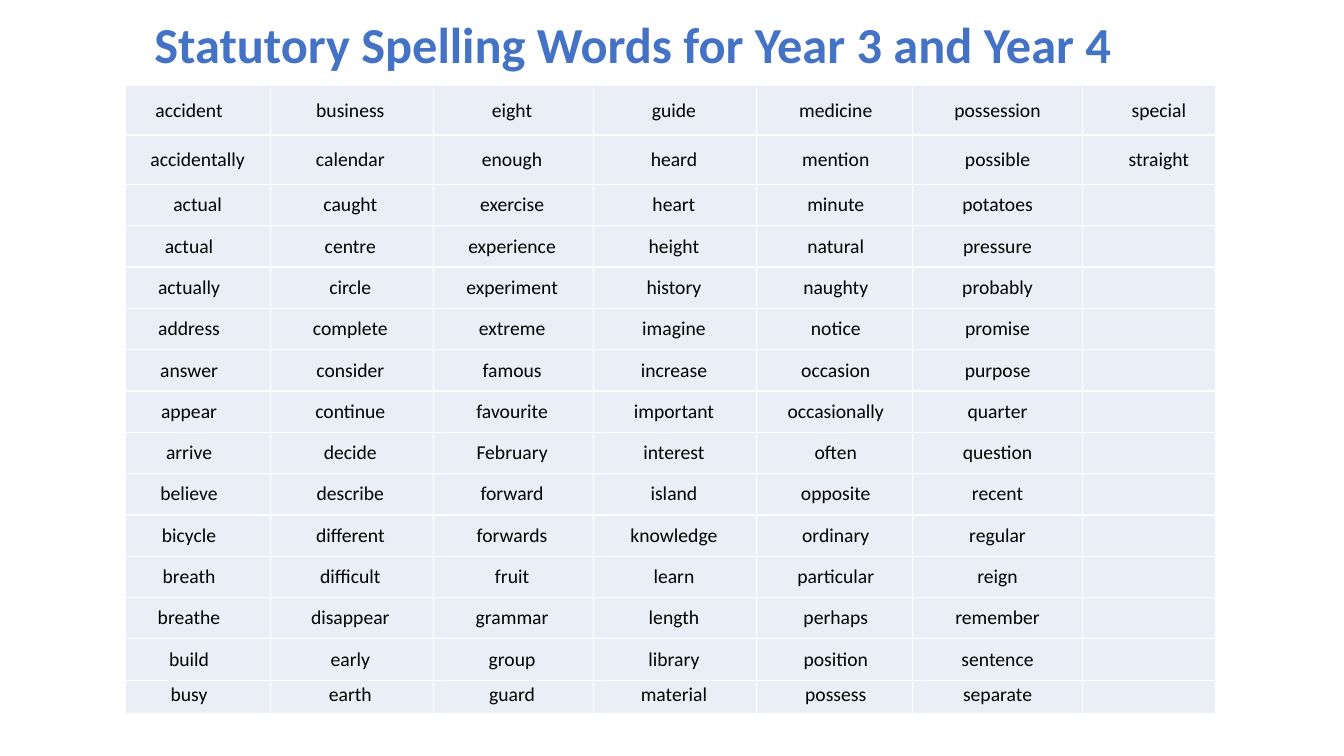
from dataclasses import dataclass

from lxml import etree
from pptx import Presentation
from pptx import util as u
from pptx.dml.color import RGBColor
from pptx.enum import text
from pptx.oxml import ns


@dataclass(frozen=True)
class Theme:
    font: str = "Calibri"
    title_color: str = "4472C4"
    word_color: str = "000000"
    cell_fill: str = "EAEFF7"
    border: str = "FFFFFF"
    title_size: int = 36
    word_size: int = 14
    last_row_spacing: float = 14.6


THEME = Theme()
TITLE = "Statutory Spelling Words for Year 3 and Year 4"

# Words run down each column
WORD_COLUMNS = [
    "accident accidentally actual actual actually address answer appear arrive "
    "believe bicycle breath breathe build busy",
    "business calendar caught centre circle complete consider continue decide "
    "describe different difficult disappear early earth",
    "eight enough exercise experience experiment extreme famous favourite February "
    "forward forwards fruit grammar group guard",
    "guide heard heart height history imagine increase important interest "
    "island knowledge learn length library material",
    "medicine mention minute natural naughty notice occasion occasionally often "
    "opposite ordinary particular perhaps position possess",
    "possession possible potatoes pressure probably promise purpose quarter question "
    "recent regular reign remember sentence separate",
    "special straight",
]
COLUMN_WIDTHS = [1.44, 1.62, 1.59, 1.61, 1.55, 1.69, 1.32]
ROW_HEIGHTS = [0.49] * 2 + [0.41] * 12 + [0.33]

# Left and right paragraph indents of each column
INDENTS = [(0.02, 0.19), (0.19, 0.22), (0.21, 0.24), (0.24, 0.26),
           (0.24, 0.21), (0.21, 0.21), (0.21, 0.02)]
UNINDENTED = {(1, 0), (2, 0)}


def write_text(frame, content, *, size, color, bold=False, indents=(0, 0), spacing=1.0):
    para = frame.paragraphs[0]
    para.alignment = text.PP_ALIGN.CENTER
    para.line_spacing = spacing
    properties = para._p.get_or_add_pPr()
    for side, indent in zip(("marL", "marR"), indents):
        properties.set(side, str(u.Inches(indent)))
    properties.set("indent", "0")
    span = para.add_run()
    span.text = content
    span.font.name = THEME.font
    span.font.size = u.Pt(size)
    span.font.bold = bold
    span.font.color.rgb = RGBColor.from_string(color)


def style_cell(cell):
    cell.margin_left = cell.margin_right = cell.margin_top = cell.margin_bottom = 0
    cell.vertical_anchor = text.MSO_ANCHOR.MIDDLE
    # Borders come before the fill in the cell properties
    properties = cell._tc.get_or_add_tcPr()
    for side in ("lnL", "lnR", "lnT", "lnB"):
        line = etree.SubElement(properties, ns.qn(f"a:{side}"), w=str(u.Pt(1)))
        fill = etree.SubElement(line, ns.qn("a:solidFill"))
        etree.SubElement(fill, ns.qn("a:srgbClr"), val=THEME.border)
    cell.fill.solid()
    cell.fill.fore_color.rgb = RGBColor.from_string(THEME.cell_fill)


def add_title(page):
    title = page.shapes.title
    title.left, title.top = u.Inches(-0.11), u.Inches(0.08)
    title.width, title.height = u.Inches(12.78), u.Inches(0.71)
    frame = title.text_frame
    frame.word_wrap = True
    frame.auto_size = text.MSO_AUTO_SIZE.SHAPE_TO_FIT_TEXT
    frame.vertical_anchor = text.MSO_ANCHOR.TOP
    write_text(frame, TITLE, size=THEME.title_size, color=THEME.title_color, bold=True)


def add_word_table(page):
    table = page.shapes.add_table(
        len(ROW_HEIGHTS), len(COLUMN_WIDTHS), u.Inches(1.24), u.Inches(0.85),
        u.Inches(sum(COLUMN_WIDTHS)), u.Inches(sum(ROW_HEIGHTS))).table
    table.first_row = table.horz_banding = False
    for column, width in zip(table.columns, COLUMN_WIDTHS):
        column.width = u.Inches(width)
    for row, height in zip(table.rows, ROW_HEIGHTS):
        row.height = u.Inches(height)
    for cell in table.iter_cells():
        style_cell(cell)

    last_row = len(ROW_HEIGHTS) - 1
    for c, words in enumerate(WORD_COLUMNS):
        for r, word in enumerate(words.split()):
            write_text(
                table.cell(r, c).text_frame, word,
                size=THEME.word_size, color=THEME.word_color,
                indents=(0, 0) if (r, c) in UNINDENTED else INDENTS[c],
                spacing=u.Pt(THEME.last_row_spacing) if r == last_row else 1.0)


def main():
    deck = Presentation()
    deck.slide_width, deck.slide_height = u.Inches(13.33), u.Inches(7.5)
    page = deck.slides.add_slide(deck.slide_layouts.get_by_name("Title Only"))
    add_title(page)
    add_word_table(page)
    deck.save("out.pptx")


if __name__ == "__main__":
    main()
